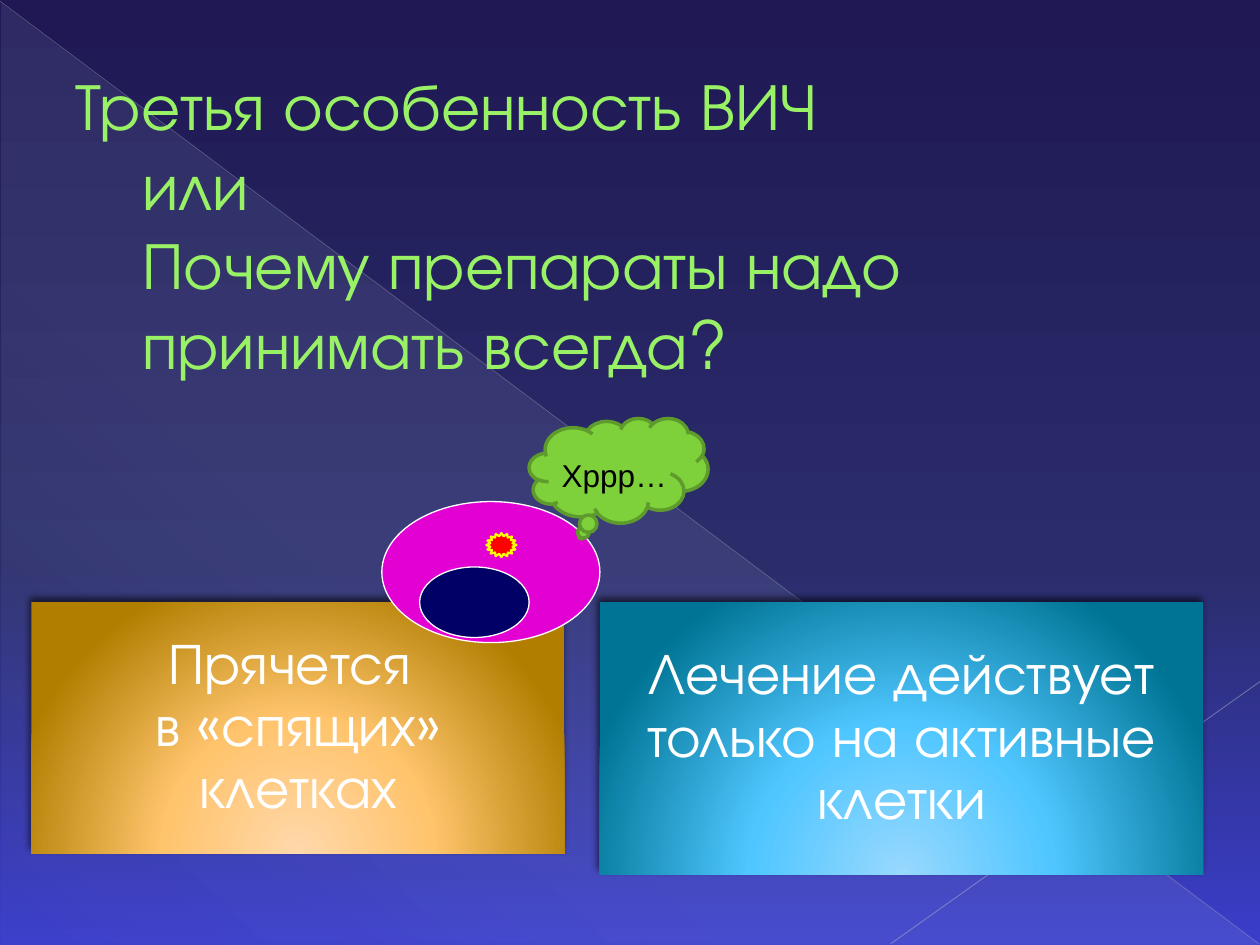
from lxml.etree import SubElement
from pptx import Presentation
from pptx.dml.color import RGBColor
from pptx.enum.shapes import MSO_CONNECTOR, MSO_SHAPE
from pptx.enum.text import MSO_ANCHOR, MSO_AUTO_SIZE, PP_ALIGN
from pptx.oxml import parse_xml
from pptx.oxml.ns import nsdecls, qn
from pptx.util import Pt

HEAD_FONT, NOTE_FONT = "TeX Gyre Adventor", "Arial"

TITLE = ["Третья особенность ВИЧ", "или", "Почему препараты надо принимать всегда?"]
# Gradient stops: position %, colour, opacity %
BACKGROUND = [(0, "1F1854", 100), (60, "2B2D6B", 100), (100, "3A3DCA", 100)]
SHEEN = [(0, "D6ECFF", 10), (70, "D6ECFF", 8), (100, "D6ECFF", 1)]
# Start, end, colour, width, opacity %
RAYS = [
    ((0, 0.7), (719.3, 539.3), "B7BCC5", 0.39, 35),
    ((720, 389.5), (509, 539.3), "BFC3CB", 0.47, 45),
]
# Lines, box, gradient stops
CARDS = [
    (["Прячется ", "в «спящих» клетках"], (18, 344.2, 304.6, 143.3),
     [(0, "FFD8AB", 100), (46, "FFC46C", 100), (100, "B17E00", 100)]),
    (["Лечение действует только на активные клетки"], (342.7, 344.2, 344.9, 155.5),
     [(0, "98D8FE", 100), (46, "4FC6FF", 100), (100, "007494", 100)]),
]
# Shape, box, fill, line colour, line width
SLEEPING_CELL = [
    (MSO_SHAPE.OVAL, (218.2, 286.6, 124.6, 80.6), "E200D2", "FFFFFF", 0.75),
    (MSO_SHAPE.OVAL, (239.8, 324, 62.6, 40.3), "000066", "FFFFFF", 0.75),
    (MSO_SHAPE.STAR_16_POINT, (277.9, 304.6, 17.3, 13.7), "FF0000", "FFFF00", 1.25),
    (MSO_SHAPE.CLOUD_CALLOUT, (302.4, 239, 102.2, 59.8), "7FD13B", "5E9B2C", 2),
]
SNORE, SNORE_BOX = "Хррр…", (313.9, 257, 102.2, 28.8)


def rgb(color):
    return RGBColor.from_string(color)


def pts(values):
    return [Pt(v) for v in values]


def set_gradient(fill, parent, stops, angle=None):
    """Linear gradient at an angle, or a round glow from below without one."""
    fill.solid()
    gs = "".join(
        f'<a:gs pos="{pos * 1000}"><a:srgbClr val="{color}">'
        f'<a:alpha val="{opacity * 1000}"/></a:srgbClr></a:gs>'
        for pos, color, opacity in stops)
    if angle is None:
        way = ('<a:path path="circle"><a:fillToRect l="50000" t="155000" '
               'r="50000" b="-55000"/></a:path>')
    else:
        way = f'<a:lin ang="{angle * 60000}" scaled="0"/>'
    grad = parse_xml(f'<a:gradFill {nsdecls("a")} rotWithShape="1">'
                     f'<a:gsLst>{gs}</a:gsLst>{way}</a:gradFill>')
    parent.replace(parent.find(qn("a:solidFill")), grad)


def add_shape(s, kind, box):
    sp = s.shapes.add_shape(kind, *pts(box))
    sp.shadow.inherit = False
    return sp


def add_lines(p, lines, size, font, color):
    """One run per line, with breaks between them."""
    for i, line in enumerate(lines):
        if i:
            p.add_line_break()
        r = p.add_run()
        r.text = line
        r.font.size, r.font.name = Pt(size), font
        r.font.color.rgb = rgb(color)


def add_ray(s, start, end, color, width, opacity):
    ray = s.shapes.add_connector(MSO_CONNECTOR.STRAIGHT, *pts(start + end))
    ray.line.color.rgb, ray.line.width = rgb(color), Pt(width)
    spPr = ray._element.spPr
    clr = spPr.find(".//" + qn("a:srgbClr"))
    SubElement(clr, qn("a:alpha"), val=str(opacity * 1000))
    SubElement(spPr, qn("a:effectLst"))


def set_title(s):
    title = s.shapes.title
    s.shapes._spTree.append(title._element)  # in front of the backdrop
    title.left, title.top, title.width, title.height = pts((36, 82.8, 648, 90))
    tf = title.text_frame
    tf.auto_size, tf.vertical_anchor = MSO_AUTO_SIZE.NONE, MSO_ANCHOR.MIDDLE
    p = tf.paragraphs[0]
    p.alignment = PP_ALIGN.LEFT
    pPr = p._p.get_or_add_pPr()
    pPr.set("marL", str(Pt(38.2)))
    pPr.set("indent", str(-Pt(38.2)))
    add_lines(p, TITLE, 37.8, HEAD_FONT, "99F166")
    for r in p.runs:
        r.font._element.insert(0, parse_xml(
            f'<a:ln {nsdecls("a")} w="{Pt(0.5)}"><a:solidFill>'
            '<a:srgbClr val="589129"/></a:solidFill></a:ln>'))


def add_card(s, lines, box, stops):
    card = add_shape(s, MSO_SHAPE.RECTANGLE, box)
    card.line.fill.background()
    spPr = card._element.spPr
    set_gradient(card.fill, spPr, stops)
    spPr.find(qn("a:effectLst")).append(parse_xml(
        f'<a:outerShdw {nsdecls("a")} blurRad="{Pt(4)}" dist="{Pt(3)}" '
        f'dir="{245 * 60000}" rotWithShape="0"><a:srgbClr val="000000">'
        '<a:alpha val="60000"/></a:srgbClr></a:outerShdw>'))
    tf = card.text_frame
    tf.word_wrap, tf.vertical_anchor = True, MSO_ANCHOR.MIDDLE
    tf.margin_left = tf.margin_right = tf.margin_top = tf.margin_bottom = Pt(10)
    p = tf.paragraphs[0]
    p.alignment, p.line_spacing = PP_ALIGN.CENTER, 0.9
    add_lines(p, lines, 33, HEAD_FONT, "FFFFFF")


def main():
    prs = Presentation()
    prs.slide_width, prs.slide_height = Pt(720), Pt(540)
    s = prs.slides.add_slide(prs.slide_layouts[5])

    bg = s.background.fill
    bg.solid()
    set_gradient(bg, s._element.cSld.find(".//" + qn("p:bgPr")), BACKGROUND, 90)
    sheen = add_shape(s, MSO_SHAPE.RIGHT_TRIANGLE, (0.7, 1.4, 719.3, 538.6))
    sheen.line.fill.background()
    set_gradient(sheen.fill, sheen._element.spPr, SHEEN, 133)
    for ray in RAYS:
        add_ray(s, *ray)

    set_title(s)
    for card in CARDS:
        add_card(s, *card)
    for kind, box, fill, line, width in SLEEPING_CELL:
        sp = add_shape(s, kind, box)
        sp.fill.solid()
        sp.fill.fore_color.rgb = rgb(fill)
        sp.line.color.rgb, sp.line.width = rgb(line), Pt(width)

    tf = s.shapes.add_textbox(*pts(SNORE_BOX)).text_frame
    tf.word_wrap, tf.auto_size = True, MSO_AUTO_SIZE.SHAPE_TO_FIT_TEXT
    add_lines(tf.paragraphs[0], [SNORE], 18, NOTE_FONT, "000000")
    prs.save("out.pptx")


if __name__ == "__main__":
    main()
